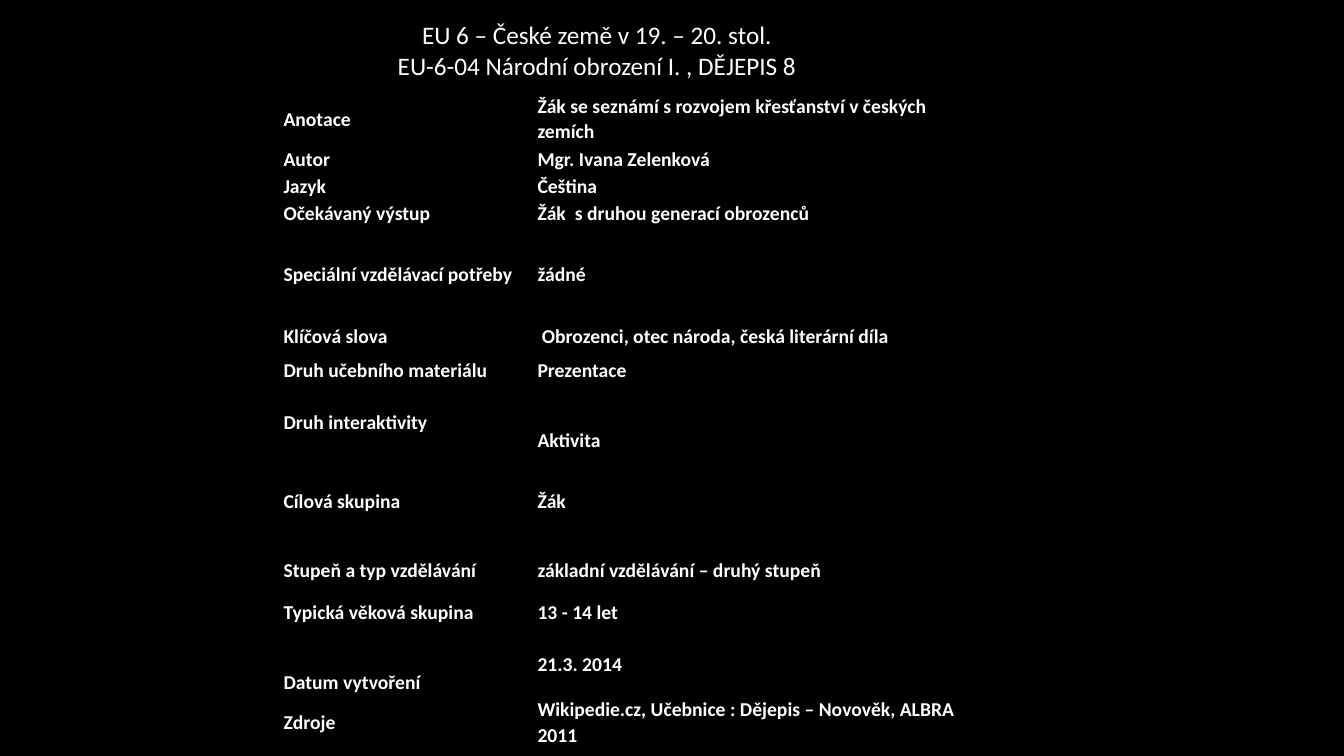
import dataclasses

import pptx
import pptx.dml.color
import pptx.enum.text
import pptx.oxml
import pptx.oxml.ns
import pptx.util

ANCHOR = pptx.enum.text.MSO_ANCHOR
ALIGN = pptx.enum.text.PP_ALIGN


@dataclasses.dataclass(frozen=True)
class Theme:
    font: str = "Calibri"
    back: str = "000000"
    ink: str = "FFFFFF"
    title_size: int = 18
    cell_size: int = 14
    border: int = 1


@dataclasses.dataclass(frozen=True)
class Row:
    label: str
    value: str
    height: float  # percent of the slide height
    label_anchor: ANCHOR = ANCHOR.MIDDLE
    value_anchor: ANCHOR = ANCHOR.MIDDLE


THEME = Theme()
WIDTH, HEIGHT = pptx.util.Inches(13.33), pptx.util.Inches(7.5)

# Row heights, in percent of the slide height
LINE, TWO_LINES, MEDIUM, LARGE, TALL = 3.47, 7.07, 5.6, 8.2, 12.6
COLUMNS = (18.9, 32.48)

TITLE = ("EU 6 – České země v 19. – 20. stol.",
         "EU-6-04 Národní obrození I. , DĚJEPIS 8")
ROWS = (
    Row("Anotace", "Žák se seznámí s rozvojem křesťanství v českých zemích", TWO_LINES),
    Row("Autor", "Mgr. Ivana Zelenková", LINE),
    Row("Jazyk", "Čeština", LINE),
    Row("Očekávaný výstup", "Žák  s druhou generací obrozenců", LINE),
    Row("Speciální vzdělávací potřeby", "žádné", TALL),
    Row("Klíčová slova", " Obrozenci, otec národa, česká literární díla", LINE),
    Row("Druh učebního materiálu", "Prezentace", MEDIUM),
    Row("Druh interaktivity", "Aktivita", LARGE, value_anchor=ANCHOR.BOTTOM),
    Row("Cílová skupina", "Žák", TALL),
    Row("Stupeň a typ vzdělávání", "základní vzdělávání – druhý stupeň", MEDIUM),
    Row("Typická věková skupina", "13 - 14 let", MEDIUM),
    Row("Datum vytvoření", "21.3. 2014", LARGE, label_anchor=ANCHOR.BOTTOM),
    Row("Zdroje", "Wikipedie.cz, Učebnice : Dějepis – Novověk, ALBRA 2011", TWO_LINES),
)


def across(percent: float) -> int:
    return round(WIDTH * percent / 100)


def down(percent: float) -> int:
    return round(HEIGHT * percent / 100)


def rgb(value: str) -> pptx.dml.color.RGBColor:
    return pptx.dml.color.RGBColor.from_string(value)


def set_all(target, values: dict) -> None:
    for name, value in values.items():
        setattr(target, name, value)


def write(p, text: str, size: int, bold: bool, **layout) -> None:
    set_all(p, layout)
    r = p.add_run()
    r.text = text
    set_all(r.font, {"name": THEME.font, "size": pptx.util.Pt(size), "bold": bold})
    r.font.color.rgb = rgb(THEME.ink)


def add_borders(cell) -> None:
    tc_pr = cell._tc.get_or_add_tcPr()
    for i, side in enumerate(("lnL", "lnR", "lnT", "lnB")):
        tc_pr.insert(i, pptx.oxml.parse_xml(
            f'<a:{side} {pptx.oxml.ns.nsdecls("a")} w="{pptx.util.Pt(THEME.border)}">'
            f'<a:solidFill><a:srgbClr val="{THEME.back}"/></a:solidFill></a:{side}>'))


def fill_cell(cell, text: str, anchor: ANCHOR) -> None:
    inset = pptx.util.Inches(0.01)
    set_all(cell, {"margin_left": inset, "margin_right": inset, "margin_top": inset,
                   "margin_bottom": inset, "vertical_anchor": anchor})
    cell.fill.solid()
    cell.fill.fore_color.rgb = rgb(THEME.back)
    add_borders(cell)
    write(cell.text_frame.paragraphs[0], text, THEME.cell_size, True,
          line_spacing=1.07, space_after=pptx.util.Pt(8))


def add_title(s) -> None:
    sp = s.shapes.title
    set_all(sp, {"left": across(26.41), "top": down(1.87),
                 "width": across(36.01), "height": down(9.47)})
    tf = sp.text_frame
    set_all(tf, {"word_wrap": True, "vertical_anchor": ANCHOR.MIDDLE,
                 "auto_size": pptx.enum.text.MSO_AUTO_SIZE.SHAPE_TO_FIT_TEXT})
    for i, line in enumerate(TITLE):
        p = tf.add_paragraph() if i else tf.paragraphs[0]
        write(p, line, THEME.title_size, False, alignment=ALIGN.CENTER)


def add_details(s) -> None:
    table = s.shapes.add_table(
        len(ROWS), len(COLUMNS), across(21.02), down(12.13),
        across(sum(COLUMNS)), down(sum(row.height for row in ROWS))).table
    set_all(table, {"first_row": False, "horz_banding": False})
    for column, width in zip(table.columns, COLUMNS):
        column.width = across(width)
    for i, row in enumerate(ROWS):
        table.rows[i].height = down(row.height)
        fill_cell(table.cell(i, 0), row.label, row.label_anchor)
        fill_cell(table.cell(i, 1), row.value, row.value_anchor)


def main() -> None:
    prs = pptx.Presentation()
    set_all(prs, {"slide_width": WIDTH, "slide_height": HEIGHT})
    s = prs.slides.add_slide(prs.slide_layouts[5])

    # Background
    s.background.fill.solid()
    s.background.fill.fore_color.rgb = rgb(THEME.back)

    # Heading and table of lesson details
    add_title(s)
    add_details(s)
    prs.save("out.pptx")


if __name__ == "__main__":
    main()
